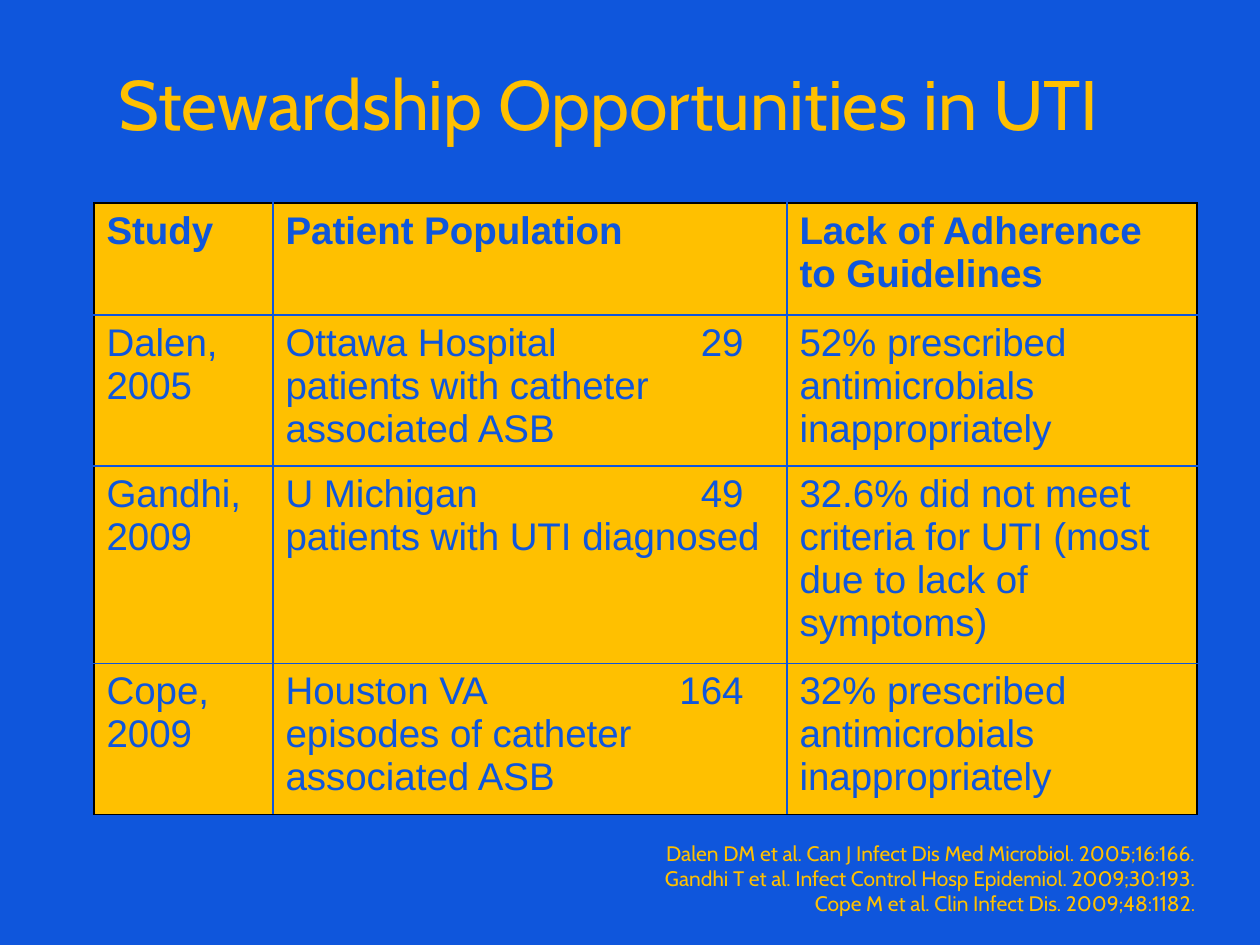
"""Builds a slide with a table of studies on stewardship opportunities in UTI."""
from lxml.etree import SubElement
from pptx import Presentation
from pptx.dml.color import RGBColor as RGB
from pptx.enum.text import PP_ALIGN as AL
from pptx.oxml.ns import qn
from pptx.util import Inches, Pt

COLORS = {"blue": "0F56DC", "gold": "FFC000", "black": "000000"}
SCALE = Inches(1) / 126
COLUMNS = [179, 514, 410]
ROW_HEIGHTS = [112, 142, 184, 142]
COUNT_TAB = 458
STUDIES = [
    ["Study", "Patient Population", "Lack of Adherence to Guidelines"],
    ["Dalen, 2005", "Ottawa Hospital\t29\vpatients with catheter associated ASB",
     "52% prescribed antimicrobials inappropriately"],
    ["Gandhi, 2009", "U Michigan\t49\vpatients with UTI diagnosed",
     "32.6% did not meet criteria for UTI (most due to lack of symptoms)"],
    ["Cope,\v2009", "Houston VA\t164\vepisodes of catheter associated ASB",
     "32% prescribed antimicrobials inappropriately"],
]
REFERENCES = [
    "Dalen DM et al. Can J Infect Dis Med Microbiol. 2005;16:166.",
    "Gandhi T et al. Infect Control Hosp Epidemiol. 2009;30:193.",
    "Cope M et al. Clin Infect Dis. 2009;48:1182.",
]


def px(n):
    return round(n * SCALE)


class Deck:
    def __init__(self, prs):
        self.slide = prs.slides.add_slide(prs.slide_layouts[6])
        fill = self.slide.background.fill
        fill.solid()
        fill.fore_color.rgb = RGB.from_string(COLORS["blue"])

    def style(self, tf, size, font, color, align=AL.LEFT, bold=False):
        for p in tf.paragraphs:
            p.alignment = align
            for r in p.runs:
                r.font.size, r.font.name, r.font.bold = Pt(size), font, bold
                r.font.color.rgb = RGB.from_string(COLORS[color])

    def text(self, box, text, size, align):
        tf = self.slide.shapes.add_textbox(*map(px, box)).text_frame
        tf.word_wrap = True
        tf.text = text
        self.style(tf, size, "Cabin", "gold", align)

    def border(self, cell, side, color):
        ln = SubElement(cell._tc.get_or_add_tcPr(), qn("a:ln" + side), w=str(Pt(1)))
        fill = SubElement(ln, qn("a:solidFill"))
        SubElement(fill, qn("a:srgbClr"), val=COLORS[color])

    def tab_stop(self, p, pos):
        tabs = SubElement(p._p.get_or_add_pPr(), qn("a:tabLst"))
        SubElement(tabs, qn("a:tab"), pos=str(px(pos)), algn="r")

    def table(self, left, top, widths, heights, rows):
        box = map(px, (left, top, sum(widths), sum(heights)))
        table = self.slide.shapes.add_table(len(rows), len(widths), *box).table
        for column, width in zip(table.columns, widths):
            column.width = px(width)
        for row, height in zip(table.rows, heights):
            row.height = px(height)
        last_row, last_col = len(rows) - 1, len(widths) - 1
        for i, row in enumerate(rows):
            for j, text in enumerate(row):
                cell = table.cell(i, j)
                outer = {"L": j == 0, "R": j == last_col, "T": i == 0, "B": i == last_row}
                for side, is_outer in outer.items():
                    self.border(cell, side, "black" if is_outer else "blue")
                cell.fill.solid()
                cell.fill.fore_color.rgb = RGB.from_string(COLORS["gold"])
                tf = cell.text_frame
                tf.text = text
                self.style(tf, 22, "Arial", "blue", bold=i == 0)
                if "\t" in text:
                    self.tab_stop(tf.paragraphs[0], COUNT_TAB)


def main():
    prs = Presentation()
    prs.slide_width, prs.slide_height = px(1260), px(945)
    deck = Deck(prs)
    deck.text((42, 54, 1134, 126), "Stewardship Opportunities in UTI", 40, AL.CENTER)
    deck.table(94, 203, COLUMNS, ROW_HEIGHTS, STUDIES)
    deck.text((608, 834, 600, 90), "\n".join(REFERENCES), 12, AL.RIGHT)
    prs.save("out.pptx")


if __name__ == "__main__":
    main()
